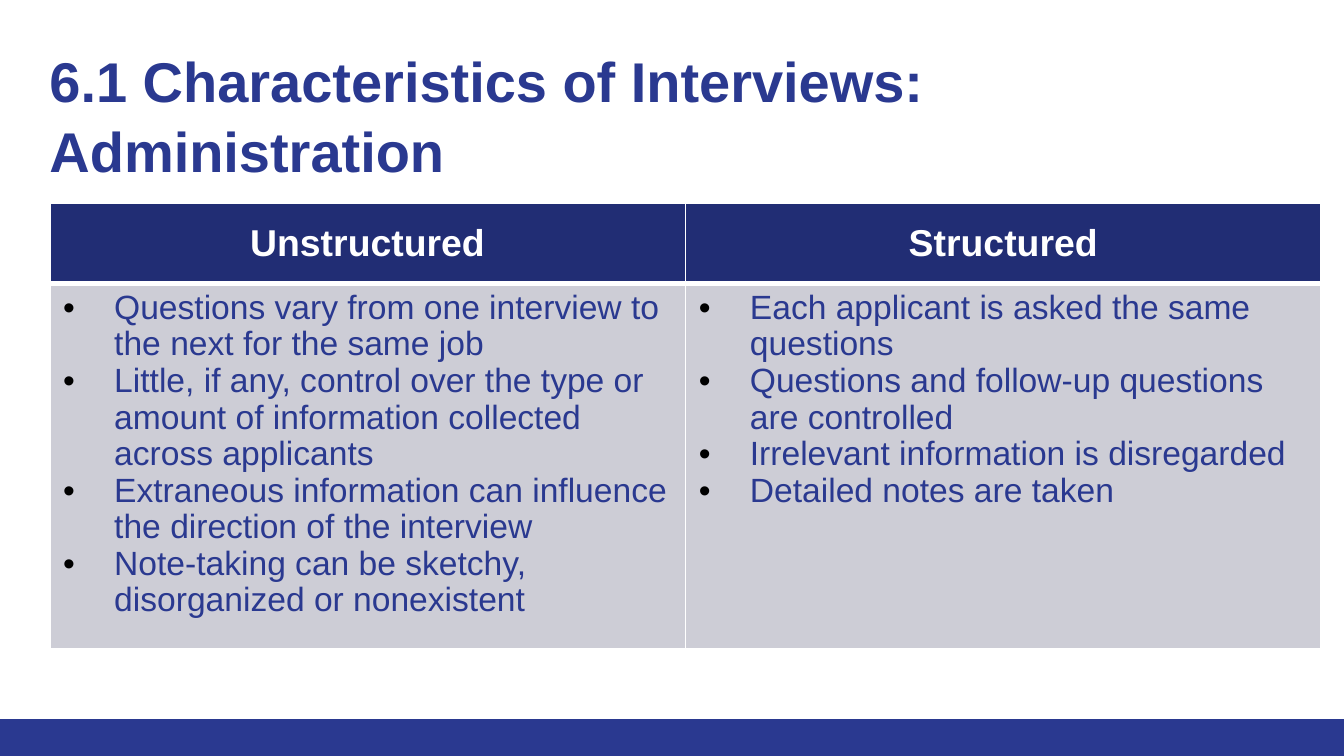
from dataclasses import dataclass

from lxml.etree import SubElement
from pptx import Presentation
from pptx.dml.color import RGBColor
from pptx.enum.shapes import MSO_SHAPE as Shape
from pptx.enum.text import MSO_ANCHOR as Anchor, PP_ALIGN as Align
from pptx.oxml.ns import qn
from pptx.util import Emu, Inches, Pt

WIDTH, HEIGHT = Inches(10), Inches(5.625)
BLUE, NAVY, GREY, WHITE, BLACK = "2A3990", "212D74", "CDCDD6", "FFFFFF", "000000"


@dataclass
class Topic:
    heading: str
    points: list[str]


TOPICS = [
    Topic("Unstructured", [
        "Questions vary from one interview to the next for the same job",
        "Little, if any, control over the type or amount of information collected across applicants",
        "Extraneous information can influence the direction of the interview",
        "Note-taking can be sketchy, disorganized or nonexistent",
    ]),
    Topic("Structured", [
        "Each applicant is asked the same questions",
        "Questions and follow-up questions are controlled",
        "Irrelevant information is disregarded",
        "Detailed notes are taken",
    ]),
]


def color(value: str) -> RGBColor:
    return RGBColor.from_string(value)


def style(para, size: float, value: str, bold: bool = False, spacing: float = 1.0) -> None:
    para.line_spacing = spacing
    for span in para.runs:
        span.font.name = "Arial"
        span.font.size = Pt(size)
        span.font.bold = bold
        span.font.color.rgb = color(value)


def add_bullet(para) -> None:
    props = para._p.get_or_add_pPr()
    indent = Inches(0.38)
    props.set("marL", str(indent))
    props.set("indent", str(-indent))
    SubElement(SubElement(props, qn("a:buClr")), qn("a:srgbClr"), val=BLACK)
    SubElement(props, qn("a:buFont"), typeface="Arial")
    SubElement(props, qn("a:buChar"), char="•")


def paint_cell(cell, fill: str, bottom: float = 1) -> None:
    props = cell._tc.get_or_add_tcPr()
    for side, width in (("L", 1), ("R", 1), ("T", 1), ("B", bottom)):
        line = SubElement(props, qn(f"a:ln{side}"), w=str(Pt(width)))
        SubElement(SubElement(line, qn("a:solidFill")), qn("a:srgbClr"), val=WHITE)
    cell.fill.solid()
    cell.fill.fore_color.rgb = color(fill)


def add_footer(page) -> None:
    top = Inches(5.35)
    bar = page.shapes.add_shape(Shape.RECTANGLE, 0, top, WIDTH, HEIGHT - top)
    bar.shadow.inherit = False
    bar.fill.solid()
    bar.fill.fore_color.rgb = color(BLUE)
    bar.line.fill.background()


def add_title(page, text: str) -> None:
    box = page.shapes.add_textbox(Inches(0.27), Inches(0.2), Emu(int(WIDTH * 0.92)), Inches(0.89))
    frame = box.text_frame
    frame.word_wrap = True
    frame.margin_left = frame.margin_right = frame.margin_bottom = Inches(0.1)
    frame.margin_top = Inches(0.13)
    frame.text = text
    style(frame.paragraphs[0], 30, BLUE, bold=True, spacing=1.04)


def add_topics(page, topics: list[Topic]) -> None:
    holder = page.shapes.add_table(
        2, len(topics), Inches(0.37), Inches(1.51), Inches(9.46), Inches(3.4))
    table = holder.table
    for row, height in zip(table.rows, (0.6, 1.81)):
        row.height = Inches(height)
    holder.height = Inches(3.4)
    for column, topic in enumerate(topics):
        header, body = table.cell(0, column), table.cell(1, column)
        paint_cell(header, NAVY, bottom=3)
        header.vertical_anchor = Anchor.MIDDLE
        header.text_frame.text = topic.heading
        para = header.text_frame.paragraphs[0]
        para.alignment = Align.CENTER
        style(para, 20, WHITE, bold=True)
        paint_cell(body, GREY)
        body.text_frame.text = "\n".join(topic.points)
        for para in body.text_frame.paragraphs:
            style(para, 18, BLUE, spacing=0.97)
            add_bullet(para)


def main() -> None:
    deck = Presentation()
    deck.slide_width, deck.slide_height = WIDTH, HEIGHT
    page = deck.slides.add_slide(deck.slide_layouts[6])
    add_footer(page)
    add_title(page, "6.1 Characteristics of Interviews: Administration")
    add_topics(page, TOPICS)
    deck.save("out.pptx")


if __name__ == "__main__":
    main()
